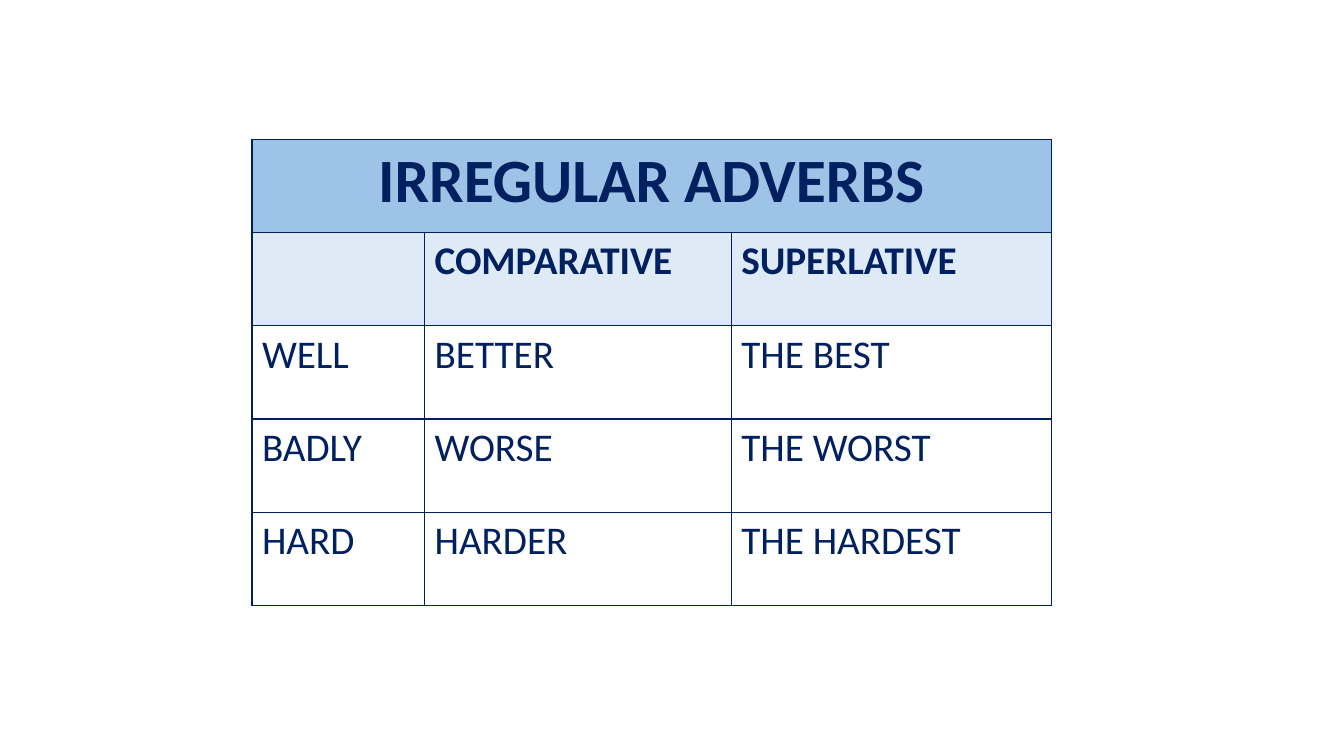
from dataclasses import dataclass

import lxml.etree
import pptx
import pptx.dml.color
import pptx.enum.text
import pptx.oxml.ns
import pptx.util

TITLE = "IRREGULAR ADVERBS"
HEADINGS = ("", "COMPARATIVE", "SUPERLATIVE")
ADVERBS = [
    ("WELL", "BETTER", "THE BEST"),
    ("BADLY", "WORSE", "THE WORST"),
    ("HARD", "HARDER", "THE HARDEST"),
]


@dataclass(frozen=True)
class Theme:
    font: str = "Calibri"
    ink: str = "002060"
    title_fill: str = "9DC3E6"
    heading_fill: str = "DEEBF7"
    body_fill: str = "FFFFFF"
    title_size: int = 44
    text_size: int = 28
    border_width: int = 1


THEME = Theme()
Cm = pptx.util.Cm
SLIDE_SIZE = Cm(33.87), Cm(19.05)
TABLE_LEFT, TABLE_TOP = Cm(6.35), Cm(3.51)
COLUMN_WIDTHS = Cm(4.35), Cm(7.73), Cm(8.06)
ROW_HEIGHT = Cm(2.35)


def rgb(value):
    return pptx.dml.color.RGBColor.from_string(value)


def write_text(cell, text, size=THEME.text_size, bold=False, align="LEFT"):
    para = cell.text_frame.paragraphs[0]
    para.alignment = getattr(pptx.enum.text.PP_ALIGN, align)
    para.font.size = pptx.util.Pt(size)
    if text:
        span = para.add_run()
        span.text = text
        span.font.name = THEME.font
        span.font.size = pptx.util.Pt(size)
        span.font.bold = bold
        span.font.color.rgb = rgb(THEME.ink)


def draw_borders(cell):
    """Line all four sides; call before the fill, which must follow in the XML."""
    properties = cell._tc.get_or_add_tcPr()
    qn = pptx.oxml.ns.qn
    for side in ("lnL", "lnR", "lnT", "lnB"):
        line = lxml.etree.SubElement(properties, qn(f"a:{side}"))
        line.set("w", str(pptx.util.Pt(THEME.border_width)))
        solid = lxml.etree.SubElement(line, qn("a:solidFill"))
        lxml.etree.SubElement(solid, qn("a:srgbClr")).set("val", THEME.ink)


def paint(cell, color):
    draw_borders(cell)
    cell.fill.solid()
    cell.fill.fore_color.rgb = rgb(color)


def add_adverb_table(page):
    rows = [(TITLE, "", ""), HEADINGS, *ADVERBS]
    fills = [THEME.title_fill, THEME.heading_fill] + [THEME.body_fill] * len(ADVERBS)
    table = page.shapes.add_table(
        len(rows), len(HEADINGS), TABLE_LEFT, TABLE_TOP,
        sum(COLUMN_WIDTHS), ROW_HEIGHT * len(rows),
    ).table
    for column, width in zip(table.columns, COLUMN_WIDTHS):
        column.width = width
    table.cell(0, 0).merge(table.cell(0, len(HEADINGS) - 1))
    for index, (texts, fill) in enumerate(zip(rows, fills)):
        table.rows[index].height = ROW_HEIGHT
        for cell, text in zip(table.rows[index].cells, texts):
            paint(cell, fill)
            if index == 0:
                write_text(cell, text, size=THEME.title_size, bold=True, align="CENTER")
            else:
                write_text(cell, text, bold=index == 1)


def main():
    deck = pptx.Presentation()
    deck.slide_width, deck.slide_height = SLIDE_SIZE
    page = deck.slides.add_slide(deck.slide_layouts[6])
    add_adverb_table(page)
    deck.save("out.pptx")


if __name__ == "__main__":
    main()
